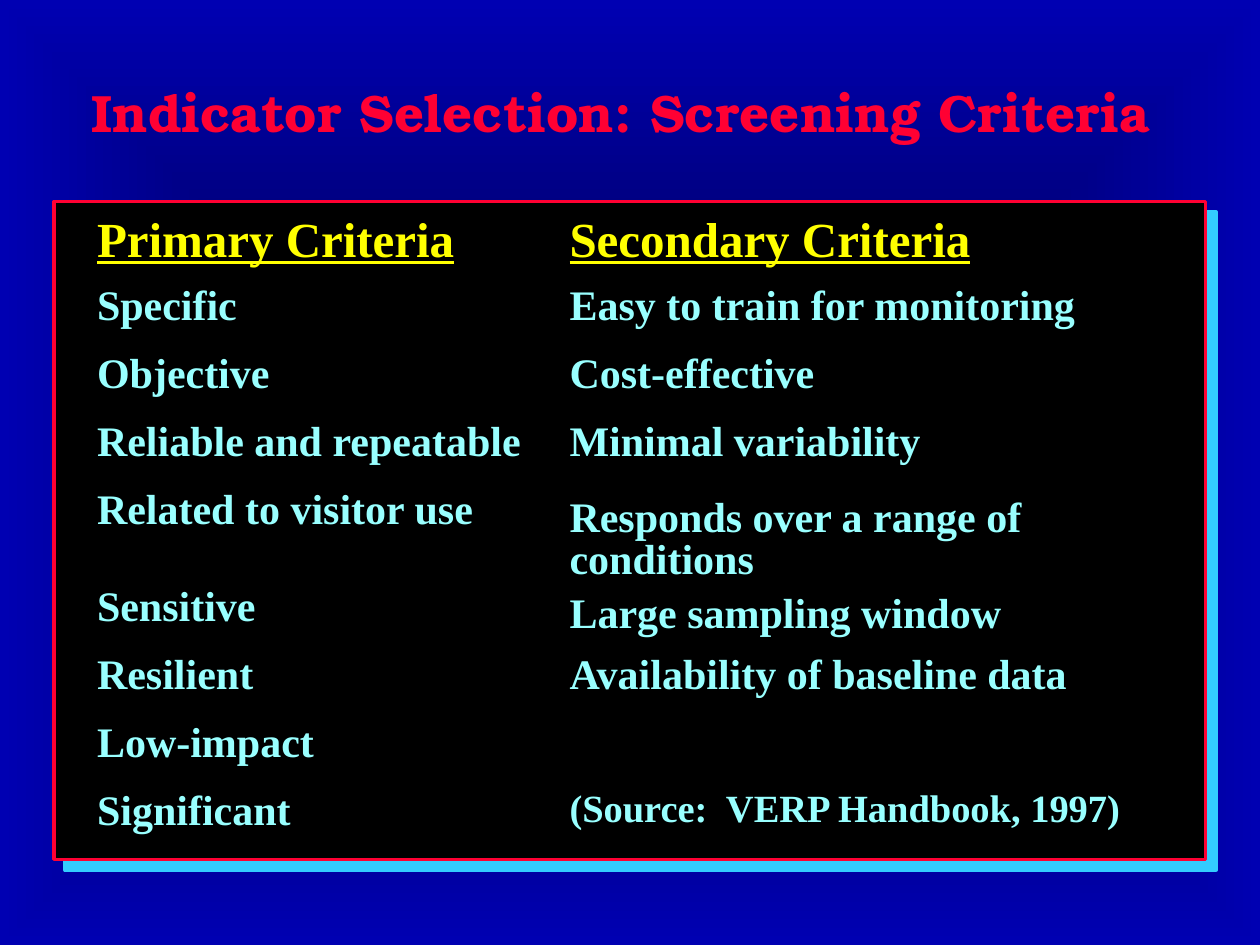
import pptx
import pptx.dml.color
import pptx.enum.shapes
import pptx.enum.text
import pptx.oxml.ns
import pptx.util
from lxml import etree

Inches = pptx.util.Inches
Pt = pptx.util.Pt
qn = pptx.oxml.ns.qn
rgb = pptx.dml.color.RGBColor.from_string

COLORS = {
    "center": "000043", "edge": "0000B2", "panel": "000000", "red": "FF0033",
    "panel_shadow": "33CCFF", "title_shadow": "8080C0",
    "heading": "FFFF00", "criterion": "99FFFF",
}
SERIF = "Times New Roman"
NO_GRID_STYLE = "{2D5ABB26-0587-4C30-8999-92F81FD0307C}"


def write_text(frame, text, size=24, color="criterion", font=SERIF, underline=False,
               line=0.7, before=20, after=0, align=None):
    paragraph = frame.paragraphs[0]
    paragraph.alignment = align
    paragraph.line_spacing = line
    properties = paragraph._p.get_or_add_pPr()
    for tag, percent in (("a:spcBef", before), ("a:spcAft", after)):
        spacing = etree.SubElement(properties, qn(tag))
        etree.SubElement(spacing, qn("a:spcPct"), val=str(percent * 1000))
    run = paragraph.add_run()
    run.text = text
    run.font.size = Pt(size)
    run.font.bold = True
    run.font.underline = underline
    run.font.name = font
    run.font.color.rgb = rgb(COLORS[color])
    return run


def add_shadow(effects, color, distance):
    shadow = etree.SubElement(effects, qn("a:outerShdw"), dist=str(Pt(distance)),
                              dir="2700000", algn="ctr", rotWithShape="0")
    etree.SubElement(shadow, qn("a:srgbClr"), val=COLORS[color])


deck = pptx.Presentation()
deck.slide_width = Inches(10)
deck.slide_height = Inches(7.5)
slide = deck.slides.add_slide(deck.slide_layouts[5])

backdrop = slide.background.fill
backdrop.gradient()
for stop, color, position in zip(backdrop.gradient_stops, ("center", "edge"), (0, 1)):
    stop.color.rgb = rgb(COLORS[color])
    stop.position = position
gradient = slide._element.find(".//" + qn("a:gradFill"))
gradient.remove(gradient.find(qn("a:lin")))
spread = etree.SubElement(gradient, qn("a:path"))
spread.set("path", "shape")
etree.SubElement(spread, qn("a:fillToRect"), l="50000", t="50000", r="50000", b="50000")

panel = slide.shapes.add_shape(pptx.enum.shapes.MSO_SHAPE.RECTANGLE,
                               Inches(0.43), Inches(1.6), Inches(9.14), Inches(5.22))
panel.fill.solid()
panel.fill.fore_color.rgb = rgb(COLORS["panel"])
panel.line.color.rgb = rgb(COLORS["red"])
panel.line.width = Pt(2)
panel.shadow.inherit = False
add_shadow(panel._element.spPr.find(qn("a:effectLst")), "panel_shadow", 8.5)

title = slide.shapes.title
title.left, title.top = Inches(0.5), Inches(0.33)
title.width, title.height = Inches(9), Inches(1.17)
title.text_frame.vertical_anchor = pptx.enum.text.MSO_ANCHOR.MIDDLE
title.text_frame.word_wrap = True
title_run = write_text(title.text_frame, "Indicator Selection: Screening Criteria ", size=30,
                       color="red", font="TeX Gyre Bonum", line=0.9, before=0,
                       align=pptx.enum.text.PP_ALIGN.CENTER)
title_effects = etree.Element(qn("a:effectLst"))
add_shadow(title_effects, "title_shadow", 2)
title_run._r.rPr.find(qn("a:solidFill")).addnext(title_effects)
slide.shapes._spTree.append(title._element)

criteria = [
    ("Primary Criteria", "Secondary Criteria"),
    ("Specific", "Easy to train for monitoring"),
    ("Objective", "Cost-effective"),
    ("Reliable and repeatable", "Minimal variability"),
    ("Related to visitor use", "Responds over a range of conditions"),
    ("Sensitive", "Large sampling window"),
    ("Resilient", "Availability of baseline data"),
    ("Low-impact", ""),
    ("Significant", "(Source:  VERP Handbook, 1997)"),
]
special_formats = {
    (0, 0): dict(size=28, color="heading", underline=True),
    (0, 1): dict(size=28, color="heading", underline=True),
    (4, 1): dict(line=0.9),
    (5, 1): dict(line=0.9, before=25, after=10),
    (8, 1): dict(size=22),
}
row_height = Inches(0.54)
criteria_table = slide.shapes.add_table(len(criteria), 2, Inches(0.67), Inches(1.75),
                                        Inches(8.83), row_height * len(criteria)).table
criteria_table.first_row = False
criteria_table.horz_banding = False
criteria_table._tbl.tblPr.find(qn("a:tableStyleId")).text = NO_GRID_STYLE
for column, width in zip(criteria_table.columns, (3.75, 5.08)):
    column.width = Inches(width)
for row, pair in enumerate(criteria):
    criteria_table.rows[row].height = row_height
    for column, criterion in enumerate(pair):
        cell = criteria_table.cell(row, column)
        cell.fill.background()
        if criterion:
            write_text(cell.text_frame, criterion, **special_formats.get((row, column), {}))

deck.save("out.pptx")
